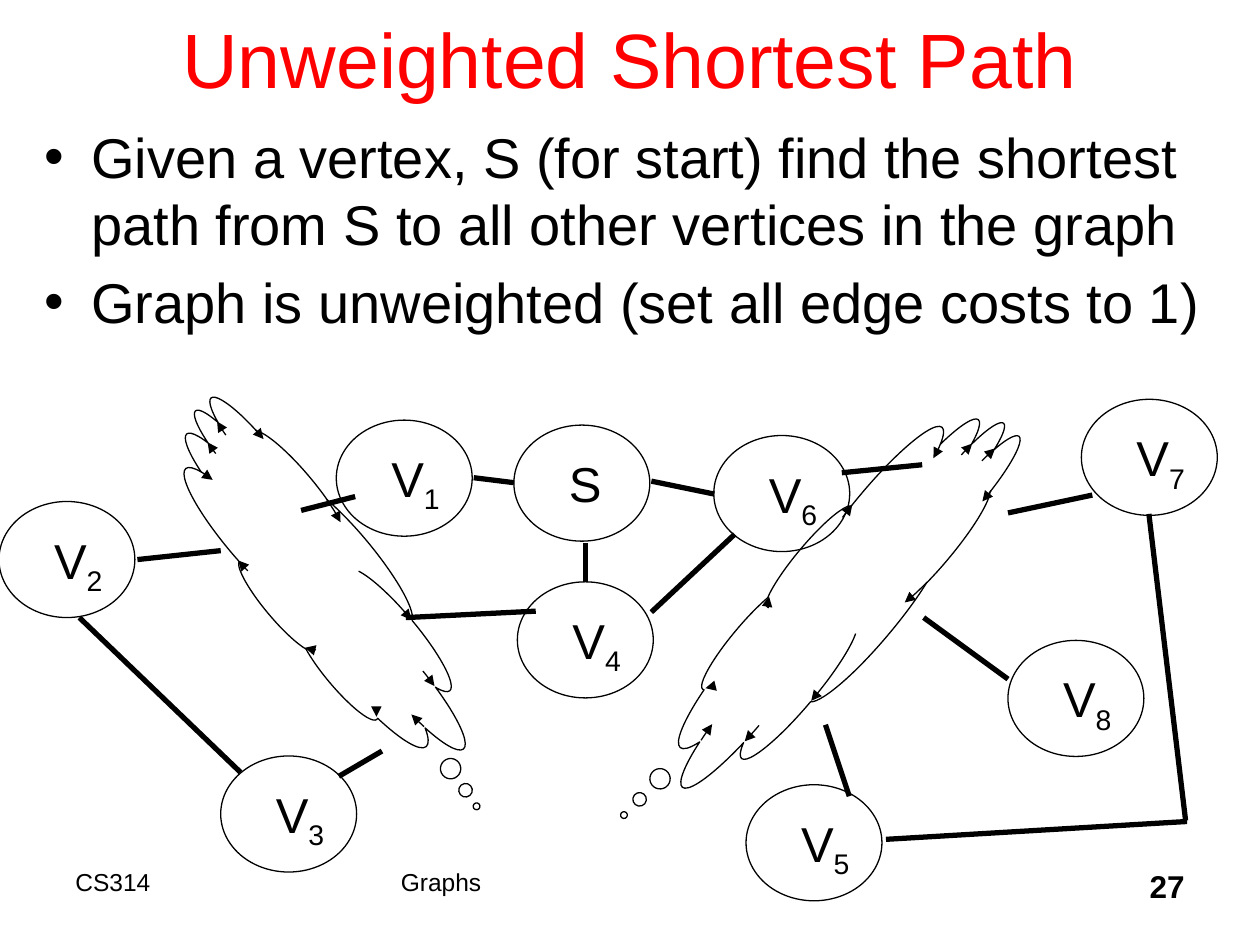
from dataclasses import dataclass

from lxml.etree import SubElement
from pptx import Presentation
from pptx.dml.color import RGBColor
from pptx.enum.shapes import MSO_CONNECTOR as Connector, MSO_SHAPE as Preset
from pptx.enum.text import MSO_ANCHOR as Anchor, PP_ALIGN as Align
from pptx.oxml.ns import qn
from pptx.util import Cm, Pt

TITLE_ONLY = 5


@dataclass(frozen=True)
class Theme:
    font: str = "Arial"
    ink: RGBColor = RGBColor(0, 0, 0)
    accent: RGBColor = RGBColor(255, 0, 0)
    title: int = 44
    body: int = 32
    vertex: int = 28
    number: int = 18
    footer: int = 14
    outline: float = 0.75
    edge: float = 3
    space_before: float = 0.2  # share of the type size


class GraphSlide:
    VERTEX_SIZE = (2.74, 2.34)
    LABEL_OFFSET = (0.86, 0.45)
    LABEL_SIZE = (1.55, 1.45)

    def __init__(self, slide, theme):
        self.slide = slide
        self.theme = theme

    def _run(self, paragraph, text, size, color=None, bold=False):
        run = paragraph.add_run()
        run.text = text
        font = run.font
        font.name = self.theme.font
        font.size = Pt(size)
        font.bold = bold
        font.color.rgb = color or self.theme.ink
        return run

    def _outline(self, shape):
        shape.shadow.inherit = False
        shape.fill.background()
        shape.line.color.rgb = self.theme.ink
        shape.line.width = Pt(self.theme.outline)

    def title(self, text, left, top, width, height):
        heading = self.slide.shapes.title
        heading.left, heading.top = Cm(left), Cm(top)
        heading.width, heading.height = Cm(width), Cm(height)
        frame = heading.text_frame
        frame.vertical_anchor = Anchor.MIDDLE
        paragraph = frame.paragraphs[0]
        paragraph.alignment = Align.CENTER
        self._run(paragraph, text, self.theme.title, self.theme.accent)

    def bullets(self, items, left, top, width, height):
        box = self.slide.shapes.add_textbox(Cm(left), Cm(top), Cm(width), Cm(height))
        frame = box.text_frame
        frame.word_wrap = True
        for index, item in enumerate(items):
            paragraph = frame.add_paragraph() if index else frame.paragraphs[0]
            paragraph.space_before = Pt(self.theme.body * self.theme.space_before)
            self._run(paragraph, item, self.theme.body)
            properties = paragraph._p.get_or_add_pPr()
            hang = Cm(0.95)
            properties.set("marL", str(hang))
            properties.set("indent", str(-hang))
            SubElement(properties, qn("a:buFont")).set("typeface", self.theme.font)
            SubElement(properties, qn("a:buChar")).set("char", "•")

    def footer(self, text, left, width, size, align=Align.LEFT, bold=False):
        box = self.slide.shapes.add_textbox(Cm(left), Cm(17.35), Cm(width), Cm(1.27))
        box.text_frame.word_wrap = True
        paragraph = box.text_frame.paragraphs[0]
        paragraph.alignment = align
        self._run(paragraph, text, size, bold=bold)

    def vertex(self, name, left, top):
        """Group a circle and its label; characters after the first are subscript."""
        shapes = self.slide.shapes.add_group_shape().shapes
        circle = shapes.add_shape(
            Preset.OVAL, Cm(left), Cm(top), *map(Cm, self.VERTEX_SIZE))
        self._outline(circle)
        dx, dy = self.LABEL_OFFSET
        label = shapes.add_textbox(
            Cm(left + dx), Cm(top + dy), *map(Cm, self.LABEL_SIZE))
        label.text_frame.word_wrap = False
        paragraph = label.text_frame.paragraphs[0]
        paragraph.space_before = Pt(self.theme.vertex * self.theme.space_before)
        letter, subscript = name[0], name[1:]
        self._run(paragraph, letter, self.theme.vertex)
        if subscript:
            run = self._run(paragraph, subscript, self.theme.vertex)
            run.font._element.set("baseline", "-25000")

    def edge(self, *ends):
        line = self.slide.shapes.add_connector(Connector.STRAIGHT, *map(Cm, ends))
        line.line.color.rgb = self.theme.ink
        line.line.width = Pt(self.theme.edge)
        SubElement(line._element.spPr, qn("a:effectLst"))

    def cloud(self, left, top, width, height, rotation):
        """Draw a thought cloud for the unknown part of the graph."""
        cloud = self.slide.shapes.add_shape(
            Preset.CLOUD_CALLOUT, Cm(left), Cm(top), Cm(width), Cm(height))
        self._outline(cloud)
        cloud.rotation = rotation
        arrow = SubElement(cloud.line._get_or_add_ln(), qn("a:tailEnd"))
        arrow.set("type", "triangle")


VERTICES = {
    "S": (10.36, 8.57),
    "V5": (15.04, 15.82),
    "V3": (4.45, 15.24),
    "V1": (6.78, 8.47),
    "V6": (14.39, 8.78),
    "V4": (10.43, 11.73),
    "V2": (-0.02, 10.11),
    "V7": (21.8, 8.05),
    "V8": (20.32, 12.91),
}

EDGES = [
    (9.55, 9.63, 10.36, 9.73),      # V1 - S
    (13.13, 9.7, 14.4, 9.96),       # S - V6
    (11.81, 11.73, 11.81, 10.95),   # V4 - S
    (2.77, 11.28, 4.45, 11.1),      # V2 - left cloud
    (1.6, 12.45, 4.85, 15.57),      # V2 - V3
    (6.83, 15.65, 7.7, 15.14),      # V3 - left cloud
    (16.64, 14.61, 17.12, 16.05),   # right cloud - V5
    (18.62, 12.45, 20.32, 13.69),   # right cloud - V8
    (20.32, 10.34, 22.02, 9.98),    # right cloud - V7
    (16.97, 9.53, 18.59, 9.37),     # V6 - right cloud
    (13.13, 12.34, 14.81, 10.77),   # V4 - V6
    (8.18, 12.45, 10.8, 12.32),     # left cloud - V4
    (6.07, 10.29, 7.16, 10.01),     # left cloud - V1
    (17.86, 16.92, 23.93, 16.56),   # V5 - corner
    (23.9, 16.54, 23.16, 10.36),    # corner - V7
]


def main():
    deck = Presentation()
    deck.slide_width, deck.slide_height = Cm(25.4), Cm(19.05)
    theme = Theme()
    page = GraphSlide(deck.slides.add_slide(deck.slide_layouts[TITLE_ONLY]), theme)

    page.title("Unweighted Shortest Path", 1.9, -0.43, 21.6, 3.18)
    page.bullets([
        "Given a vertex, S (for start) find the shortest path from S "
        "to all other vertices in the graph",
        "Graph is unweighted (set all edge costs to 1)",
    ], 0.64, 2.34, 24.13, 5.72)
    page.footer("CS314", 1.27, 6.35, theme.footer)
    page.footer("Graphs", 7.83, 9.74, theme.footer)
    page.footer("27", 18.84, 5.29, theme.number, Align.RIGHT, bold=True)

    for name, corner in VERTICES.items():
        page.vertex(name, *corner)
    for ends in EDGES:
        page.edge(*ends)
    page.cloud(5.28, 7.42, 2.46, 8.69, rotation=-40)
    page.cloud(15.67, 7.19, 2.46, 9.78, rotation=40)

    deck.save("out.pptx")


if __name__ == "__main__":
    main()
